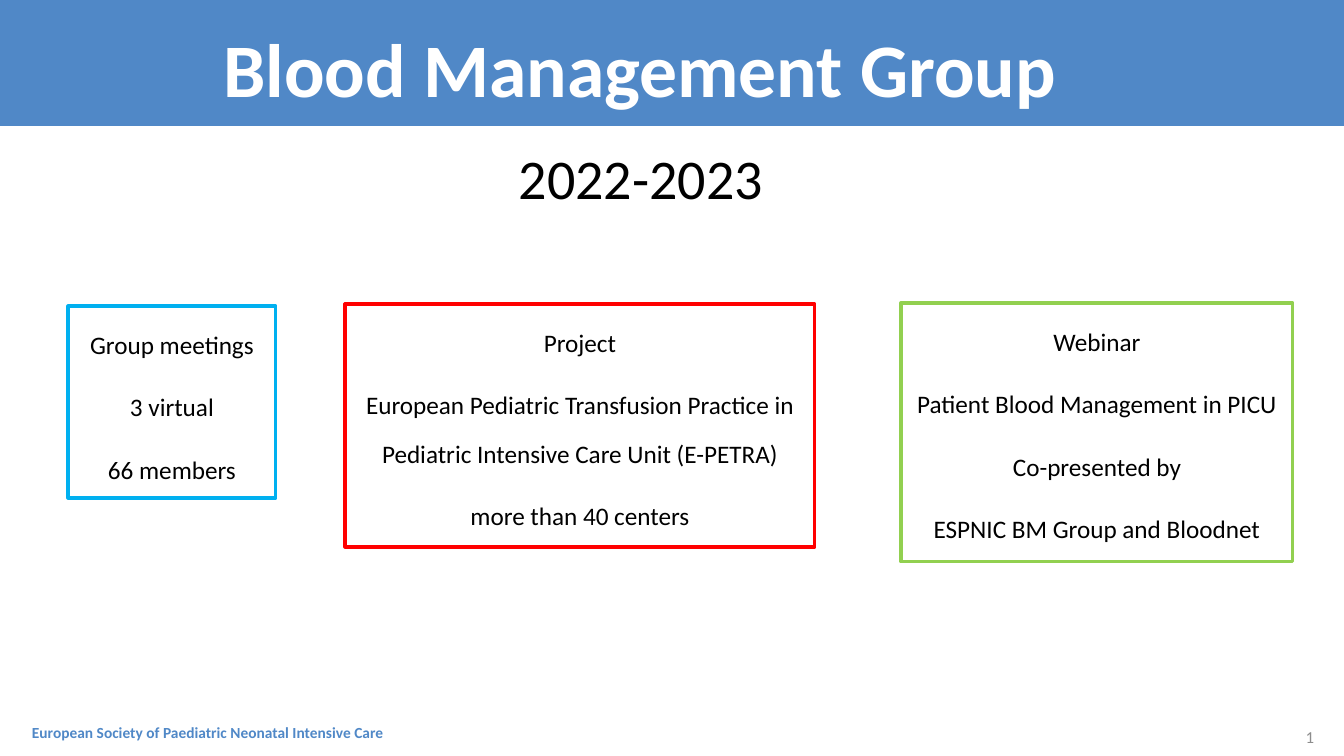
from lxml.etree import SubElement
from pptx import Presentation
from pptx.dml.color import RGBColor
from pptx.enum.shapes import MSO_SHAPE
from pptx.enum.text import MSO_ANCHOR, MSO_AUTO_SIZE, PP_ALIGN
from pptx.oxml.ns import qn
from pptx.util import Emu, Pt

# Content: positions are left, top, width, height in px
SLIDE_SIZE = (1344, 756)
BLUE, BLACK, WHITE, GRAY = "5088C7", "000000", "FFFFFF", "8C8C8C"
TITLE = "Blood Management Group"
YEARS = "2022-2023"
FOOTER = "European Society of Paediatric Neonatal Intensive Care"
MEETINGS = ["Group meetings", "3 virtual", "66 members"]
CARDS = [
    ((68, 306, 208, 192), "00B0F0", MEETINGS),
    ((345, 304, 470, 243), "FF0000", [
        "Project",
        "European Pediatric Transfusion Practice in Pediatric Intensive Care Unit (E-PETRA)",
        "more than 40 centers",
    ]),
    ((901, 303, 392, 259), "92D050", [
        "Webinar",
        "Patient Blood Management in PICU",
        "Co-presented by",
        "ESPNIC BM Group and Bloodnet",
    ]),
]


def px(value):
    return Emu(round(value * 914400 / 100.8))


def color(hex_string):
    return RGBColor.from_string(hex_string)


def place(shape, box):
    shape.left, shape.top, shape.width, shape.height = map(px, box)


def style(paragraph, size, hex_string, bold=False, align=PP_ALIGN.LEFT):
    paragraph.alignment = align
    font = paragraph.font
    font.name, font.size, font.bold = "Calibri", Pt(size), bold
    font.color.rgb = color(hex_string)


def fill_card(shape, box, outline, lines):
    place(shape, box)
    shape.line.color.rgb = color(outline)
    shape.line.width = Pt(2.25)
    frame = shape.text_frame
    frame.word_wrap = True
    frame.auto_size = MSO_AUTO_SIZE.NONE
    frame.vertical_anchor = MSO_ANCHOR.TOP
    frame.text = "\n".join(lines)
    for index, paragraph in enumerate(frame.paragraphs):
        paragraph.line_spacing = 1.6
        paragraph.space_before = Pt(10 if index else 0)
        style(paragraph, 18, BLACK, align=PP_ALIGN.CENTER)


def add_label(slide, box, text, wrap=True):
    label = slide.shapes.add_textbox(*map(px, box))
    label.text_frame.word_wrap = wrap
    label.text_frame.text = text
    return label.text_frame


presentation = Presentation()
presentation.slide_width, presentation.slide_height = map(px, SLIDE_SIZE)
slide = presentation.slides.add_slide(presentation.slide_layouts[0])
title, subtitle = slide.placeholders

# Header band, behind the title
band = slide.shapes.add_shape(MSO_SHAPE.RECTANGLE, *map(px, (0, 0, 1344, 126)))
band.shadow.inherit = False
band.fill.solid()
band.fill.fore_color.rgb = color(BLUE)
band.line.fill.background()
title._element.addprevious(band._element)

# Title and years
place(title, (136, 8, 1008, 111))
title.text_frame.text = TITLE
title.text_frame.auto_size = MSO_AUTO_SIZE.NONE
title.text_frame.vertical_anchor = MSO_ANCHOR.BOTTOM
title_paragraph = title.text_frame.paragraphs[0]
title_paragraph.line_spacing = 0.9
style(title_paragraph, 54, WHITE, bold=True, align=PP_ALIGN.CENTER)
years = add_label(slide, (509, 139, 267, 78), YEARS, wrap=False)
style(years.paragraphs[0], 40, BLACK)

# Activity cards: the first one is the subtitle placeholder
for index, (box, outline, lines) in enumerate(CARDS):
    card = subtitle if index == 0 else slide.shapes.add_textbox(*map(px, box))
    fill_card(card, box, outline, lines)

# Footer and slide number
footer = add_label(slide, (22, 718, 867, 29), FOOTER)
style(footer.paragraphs[0], 11, BLUE, bold=True)
number = add_label(slide, (1022, 717, 302, 40), "")
number.vertical_anchor = MSO_ANCHOR.MIDDLE
number_paragraph = number.paragraphs[0]
style(number_paragraph, 12, GRAY, align=PP_ALIGN.RIGHT)
field = SubElement(number_paragraph._p, qn("a:fld"), type="slidenum",
                   id="{B6F15528-21DE-4FAA-801E-634DDDAF4B2B}")
SubElement(field, qn("a:rPr"), lang="en-US")
SubElement(field, qn("a:t")).text = "1"

presentation.save("out.pptx")
